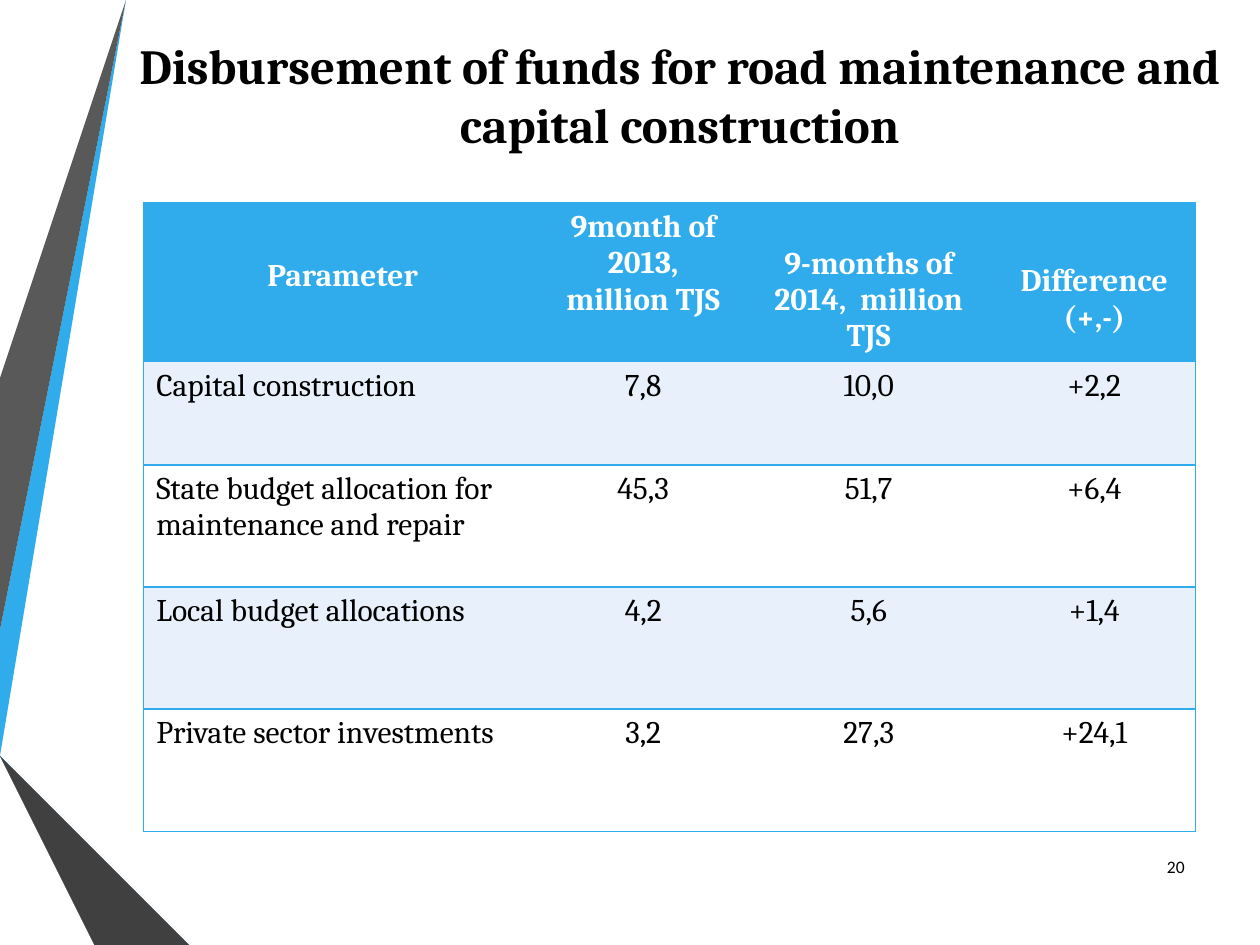
from lxml.etree import SubElement
from pptx import Presentation
from pptx.dml.color import RGBColor
from pptx.enum.text import MSO_ANCHOR as Anchor, PP_ALIGN as Align
from pptx.oxml.ns import qn
from pptx.util import Inches, Pt

BLUE, PALE, WHITE, BLACK = "30ACEC", "E8F1FB", "FFFFFF", "000000"


def write(paragraph, text, size, color, align, bold=False, font="Cambria"):
    paragraph.alignment = align
    run = paragraph.add_run()
    run.text = text
    run.font.name, run.font.size, run.font.bold = font, Pt(size), bold
    run.font.color.rgb = RGBColor.from_string(color)


def draw_border(cell, side, color):
    """Line one side (L, R, T or B) of a cell; None leaves it clear."""
    line = SubElement(cell._tc.get_or_add_tcPr(), qn(f"a:ln{side}"), w=str(Pt(1)))
    if color:
        fill = SubElement(line, qn("a:solidFill"))
        SubElement(fill, qn("a:srgbClr"), val=color)
    else:
        SubElement(line, qn("a:noFill"))


presentation = Presentation()
presentation.slide_width, presentation.slide_height = Inches(10), Inches(7.5)
slide = presentation.slides.add_slide(presentation.slide_layouts[5])
shapes = slide.shapes

# Ribbons along the left edge, from back to front
ribbons = [
    (BLUE, [(0, 5.44), (0, 5.75), (0.22, 5.79), (1.17, 0), (0.89, 0)]),
    ("595959", [(0.83, 0), (0.55, 0), (0, 3.36), (0, 5.06)]),
    ("262626", [(0, 6.19), (0, 6.21), (0.93, 7.5), (0.99, 7.5)]),
    ("0C5A82", [(0, 5.79), (0, 5.8), (1.56, 7.5), (1.63, 7.5)]),
    ("1287C3", [(0, 5.79), (1.63, 7.5), (2.33, 7.5), (0.22, 5.79), (0, 5.75)]),
    ("404040", [(0, 6.19), (0.99, 7.5), (1.51, 7.5), (0, 5.86)]),
]
for color, points in ribbons:
    builder = shapes.build_freeform(*points[0], scale=Inches(1))
    builder.add_line_segments(points[1:], close=True)
    ribbon = builder.convert_to_shape()
    ribbon.fill.solid()
    ribbon.fill.fore_color.rgb = RGBColor.from_string(color)
    ribbon.line.fill.background()
    ribbon.shadow.inherit = False

# Title, brought in front of the ribbons
title = shapes.title
ribbon._element.addnext(title._element)
title.left, title.top = Inches(0.82), Inches(0.13)
title.width, title.height = Inches(9.15), Inches(1.24)
title.text_frame.vertical_anchor = Anchor.MIDDLE
title.text_frame.word_wrap = True
write(title.text_frame.paragraphs[0],
      "Disbursement of funds for road maintenance and capital construction",
      28, BLACK, Align.CENTER, bold=True)

# Table of funds
rows = [
    ["Parameter", "9month of 2013, million TJS", "9-months of 2014,  million TJS",
     "Difference (+,-)"],
    ["Capital construction", "7,8", "10,0", "+2,2"],
    ["State budget allocation for maintenance and repair", "45,3", "51,7", "+6,4"],
    ["Local budget allocations", "4,2", "5,6", "+1,4"],
    ["Private sector investments", "3,2", "27,3", "+24,1"],
]
column_widths = [3.16, 1.61, 1.97, 1.61]
row_heights = [1.26, 0.82, 0.97, 0.97, 0.97]
header_margins = [0.44, 0.05, 0.34, 0.48]
last_column = len(column_widths) - 1
table = shapes.add_table(len(rows), len(column_widths), Inches(1.14), Inches(1.61),
                         Inches(sum(column_widths)), Inches(sum(row_heights))).table
for column, width in zip(table.columns, column_widths):
    column.width = Inches(width)
for row, height in zip(table.rows, row_heights):
    row.height = Inches(height)

for r, texts in enumerate(rows):
    header = r == 0
    fill_color = BLUE if header else PALE if r % 2 else WHITE
    for c, text in enumerate(texts):
        cell = table.cell(r, c)
        draw_border(cell, "L", BLUE if c == 0 else None)
        draw_border(cell, "R", BLUE if c == last_column else None)
        draw_border(cell, "T", BLUE)
        draw_border(cell, "B", BLUE)
        cell.fill.solid()
        cell.fill.fore_color.rgb = RGBColor.from_string(fill_color)
        if header:
            cell.margin_top = Inches(header_margins[c])
        write(cell.text_frame.paragraphs[0], text, 18, WHITE if header else BLACK,
              Align.CENTER if header or c else Align.LEFT, bold=header)

# Slide number
number = shapes.add_textbox(Inches(9.03), Inches(6.68), Inches(0.47), Inches(0.4))
number.text_frame.word_wrap = True
number.text_frame.vertical_anchor = Anchor.MIDDLE
write(number.text_frame.paragraphs[0], "20", 10, BLACK, Align.RIGHT, font="Calibri")

presentation.save("out.pptx")
